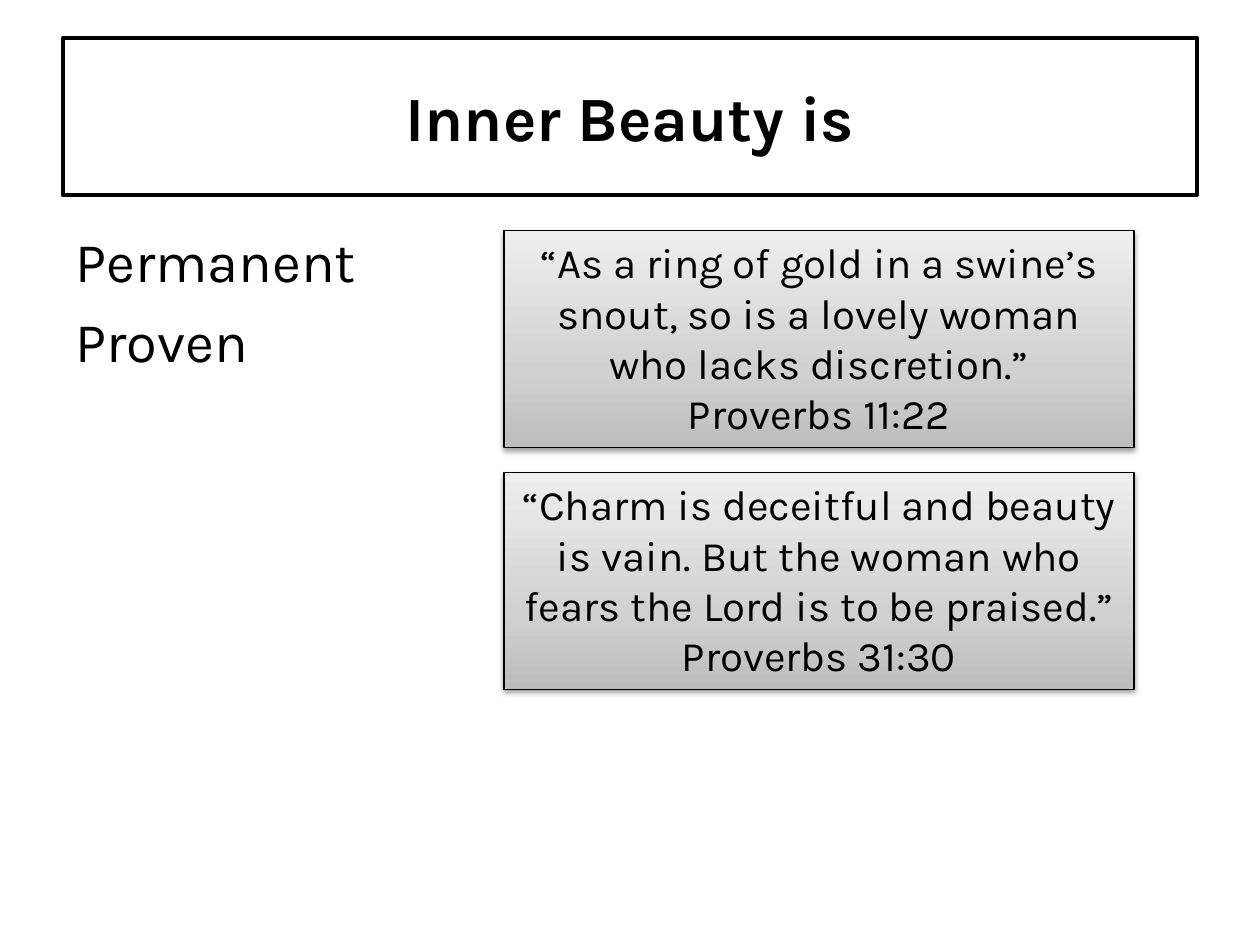
from copy import deepcopy

from lxml.etree import SubElement
from pptx import Presentation
from pptx.dml.color import RGBColor
from pptx.enum.shapes import MSO_SHAPE
from pptx.enum.text import MSO_ANCHOR, MSO_AUTO_SIZE, PP_ALIGN
from pptx.oxml.ns import qn
from pptx.util import Inches, Pt

FONT = "Karla"
BLACK = RGBColor(0x00, 0x00, 0x00)
VERSE_STOPS = [
    (0, RGBColor(0xBD, 0xBD, 0xBD)),
    (0.35, RGBColor(0xD1, 0xD1, 0xD1)),
    (1, RGBColor(0xEE, 0xEE, 0xEE)),
]
QUALITIES = ["Permanent", "Proven"]
VERSES = [
    ("“As a ring of gold in a swine’s snout, so is a lovely woman who lacks discretion.”",
     "Proverbs 11:22"),
    ("“Charm is deceitful and beauty is vain. But the woman who fears the Lord is to be praised.”",
     "Proverbs 31:30"),
]


def write_paragraphs(frame, lines, size, align, bold=False):
    frame.word_wrap = True
    frame.text = "\n".join(lines)
    for paragraph in frame.paragraphs:
        paragraph.alignment = align
        font = paragraph.font
        font.name, font.size, font.bold = FONT, Pt(size), bold
        font.color.rgb = BLACK


def add_title(slide, left, top, width, height):
    title = slide.shapes.add_textbox(left, top, width, height)
    title.line.color.rgb = BLACK
    title.line.width = Pt(2.25)
    title.text_frame.vertical_anchor = MSO_ANCHOR.MIDDLE
    write_paragraphs(title.text_frame, ["Inner Beauty is"], 36, PP_ALIGN.CENTER, bold=True)


def add_qualities(slide, left, top, width, height):
    qualities = slide.shapes.add_textbox(left, top, width, height)
    frame = qualities.text_frame
    frame.text = "\n".join(QUALITIES)
    for paragraph in frame.paragraphs:
        properties = paragraph._p.get_or_add_pPr()
        properties.set("marL", str(Inches(0.38)))
        properties.set("indent", str(-Inches(0.38)))
        SubElement(properties, qn("a:buFont"), typeface="Arial")
        SubElement(properties, qn("a:buChar"), char="•")
    write_paragraphs(frame, QUALITIES, 32, PP_ALIGN.LEFT)
    for paragraph in frame.paragraphs[1:]:
        paragraph.space_before = Pt(7)


def fill_with_gradient(shape, stops):
    """Fill the shape with the stops, running from bottom to top."""
    fill = shape.fill
    fill.gradient()
    fill.gradient_angle = 90
    stop_list = shape._element.spPr.find(qn("a:gradFill")).find(qn("a:gsLst"))
    while len(stop_list) < len(stops):
        stop_list.append(deepcopy(stop_list[-1]))
    for stop, (position, color) in zip(fill.gradient_stops, stops):
        stop.position = position
        stop.color.rgb = color


def add_drop_shadow(shape):
    shape.shadow.inherit = False
    effects = shape._element.spPr.find(qn("a:effectLst"))
    shadow = SubElement(effects, qn("a:outerShdw"), blurRad=str(Pt(3.1)),
                        dist=str(Pt(1.6)), dir="5400000", rotWithShape="0")
    color = SubElement(shadow, qn("a:srgbClr"), val=str(BLACK))
    SubElement(color, qn("a:alpha"), val="38000")


def add_verse(slide, verse, left, top, width, height):
    card = slide.shapes.add_shape(MSO_SHAPE.RECTANGLE, left, top, width, height)
    fill_with_gradient(card, VERSE_STOPS)
    card.line.color.rgb = BLACK
    card.line.width = Pt(0.75)
    add_drop_shadow(card)
    frame = card.text_frame
    frame.vertical_anchor = MSO_ANCHOR.TOP
    write_paragraphs(frame, verse, 24, PP_ALIGN.CENTER)
    frame.auto_size = MSO_AUTO_SIZE.SHAPE_TO_FIT_TEXT


def main():
    presentation = Presentation()
    presentation.slide_width = Inches(10)
    presentation.slide_height = Inches(7.5)
    slide = presentation.slides.add_slide(presentation.slide_layouts[6])

    add_title(slide, Inches(0.5), Inches(0.3), Inches(9), Inches(1.25))
    add_qualities(slide, Inches(0.5), Inches(1.75), Inches(9), Inches(1.08))
    for row, verse in enumerate(VERSES):
        add_verse(slide, verse, Inches(4), Inches(1.83 + 1.92 * row), Inches(5), Inches(1.72))

    presentation.save("out.pptx")


if __name__ == "__main__":
    main()
